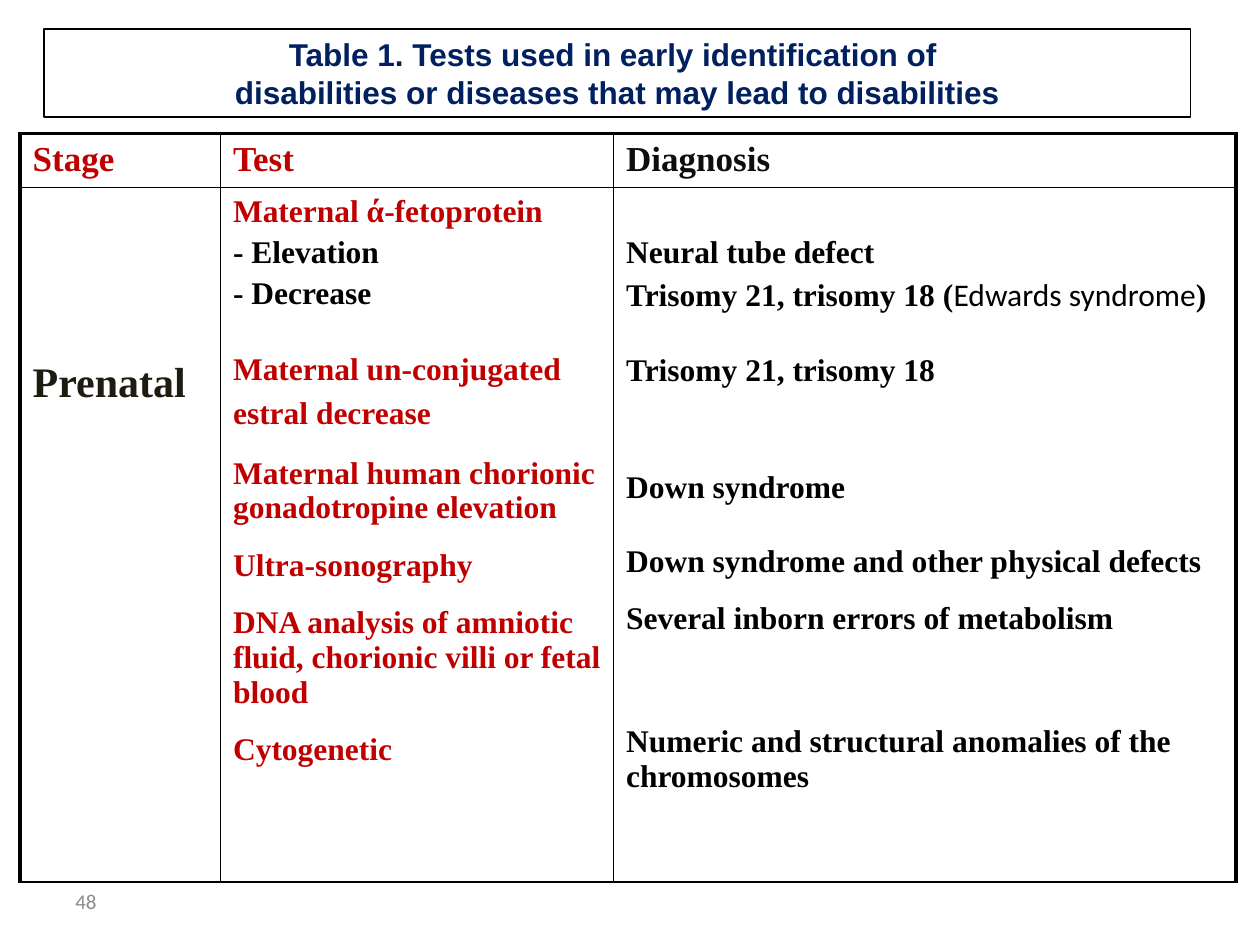
from lxml import etree
from pptx import Presentation
from pptx.dml.color import RGBColor
from pptx.enum.shapes import MSO_SHAPE
from pptx.enum.text import MSO_ANCHOR, PP_ALIGN
from pptx.oxml.ns import qn
from pptx.util import Inches, Pt

RECT = MSO_SHAPE.RECTANGLE
MIDDLE, TOP = MSO_ANCHOR.MIDDLE, MSO_ANCHOR.TOP
LEFT, CENTER = PP_ALIGN.LEFT, PP_ALIGN.CENTER

WIDE, HIGH = 10, 7.5
HEX = {"red": "C00000", "black": "000000", "near": "0D0D0D", "olive": "1E1C11",
       "navy": "002060", "gray": "8C8C8C", "white": "FFFFFF"}
SERIF = "Times New Roman"
COLS = [1.59, 3.12, 4.94]
ROWS = [0.43, 5.51]
THICK, THIN = 2.25, 1
LINE, STEP, WIDE_STEP = 3.6, 12.75, 22  # points of space before a paragraph

HEADS = [("Stage", "red"), ("Test", "red"), ("Diagnosis", "near")]
# Each entry: space before, then its runs as (text, color, changes)
STAGE = [(0, [("Prenatal", "olive", {"size": 24})])]
TESTS = [
    (0, [("Maternal ά-fetoprotein", "red", {})]),
    (LINE, [("- Elevation", "black", {})]),
    (LINE, [("- Decrease", "black", {})]),
    (23.5, [("Maternal un-conjugated estral decrease", "red", {}),
            (" ", "red", {"size": 24, "bold": False})]),
    (STEP, [("Maternal human chorionic gonadotropine elevation", "red", {})]),
    (STEP, [("Ultra-sonography", "red", {})]),
    (STEP, [("DNA analysis of amniotic fluid, chorionic villi or fetal blood",
             "red", {})]),
    (STEP, [("Cytogenetic", "red", {})]),
]
FINDS = [
    (0, [("Neural tube defect", "black", {})]),
    (LINE, [("Trisomy 21, trisomy 18 (", "black", {}),
            ("Edwards syndrome", "black", {"name": "Calibri", "bold": False}),
            (")", "black", {})]),
    (WIDE_STEP, [("Trisomy 21, trisomy 18", "black", {})]),
    (47, [("Down syndrome", "black", {})]),
    (WIDE_STEP, [("Down syndrome and other physical defects", "black", {})]),
    (STEP, [("Several inborn errors of metabolism", "black", {})]),
    (50.5, [("Numeric and structural anomalies of the chromosomes", "black", {})]),
]
BODY = [(STAGE, 1.37), (TESTS, 0.05), (FINDS, 0.38)]  # text, top margin


def rgb(name):
    return RGBColor.from_string(HEX[name])


def add_run(para, text, color, size=18, name=SERIF, bold=True):
    run = para.add_run()
    run.text = text
    for key, val in {"size": Pt(size), "name": name, "bold": bold}.items():
        setattr(run.font, key, val)
    run.font.color.rgb = rgb(color)


def write(frame, paras, align=LEFT, **base):
    """Fill a text frame with (space before, runs) entries."""
    for i, (gap, runs) in enumerate(paras):
        para = frame.add_paragraph() if i else frame.paragraphs[0]
        para.alignment = align
        para.space_before = Pt(gap)
        for text, color, diff in runs:
            add_run(para, text, color, **{**base, **diff})


def add_edges(cell, row, col):
    """Draw thick lines on the left, right and top of the table, thin elsewhere."""
    props = cell._tc.get_or_add_tcPr()
    thick = {"L": col == 0, "R": col == len(COLS) - 1, "T": row == 0, "B": False}
    for i, (side, bold) in enumerate(thick.items()):
        edge = etree.Element(qn(f"a:ln{side}"), w=str(Pt(THICK if bold else THIN)))
        fill = etree.SubElement(edge, qn("a:solidFill"))
        etree.SubElement(fill, qn("a:srgbClr"), val=HEX["black"])
        props.insert(i, edge)


def add_cell(table, row, col, paras, top, **base):
    cell = table.cell(row, col)
    cell.margin_top = Inches(top)
    cell.vertical_anchor = TOP
    write(cell.text_frame, paras, **base)
    add_edges(cell, row, col)
    cell.fill.background()


def add_grid(slide):
    frame = slide.shapes.add_table(len(ROWS), len(COLS), Inches(0.16), Inches(1.06),
                                   Inches(sum(COLS)), Inches(sum(ROWS)))
    table = frame.table
    table.first_row = table.horz_banding = False
    for col, width in zip(table.columns, COLS):
        col.width = Inches(width)
    for row, height in zip(table.rows, ROWS):
        row.height = Inches(height)
    for col, (text, color) in enumerate(HEADS):
        add_cell(table, 0, col, [(0, [(text, color, {})])], 0.05, size=20)
    for col, (paras, top) in enumerate(BODY):
        add_cell(table, 1, col, paras, top)


def add_title(slide):
    box = slide.shapes.add_shape(RECT, Inches(0.035 * WIDE), Inches(0.23),
                                 Inches(0.91 * WIDE), Inches(0.7))
    box.shadow.inherit = False
    box.fill.solid()
    box.fill.fore_color.rgb = rgb("white")
    box.line.color.rgb = rgb("black")
    box.line.width = Pt(0.75)
    frame = box.text_frame
    frame.word_wrap = False
    frame.vertical_anchor = MIDDLE
    lines = ["Table 1. Tests used in early identification of ",
             "disabilities or diseases that may lead to disabilities"]
    write(frame, [(0, [(line, "navy", {})]) for line in lines], CENTER, name="Arial")


def add_number(slide):
    box = slide.shapes.add_textbox(Inches(0.05 * WIDE), Inches(6.95),
                                   Inches(2.33), Inches(0.4))
    frame = box.text_frame
    frame.word_wrap = True
    frame.vertical_anchor = MIDDLE
    write(frame, [(0, [("48", "gray", {})])], size=12, name="Calibri", bold=False)


def main():
    deck = Presentation()
    deck.slide_width, deck.slide_height = Inches(WIDE), Inches(HIGH)
    slide = deck.slides.add_slide(deck.slide_layouts[6])
    add_grid(slide)
    add_title(slide)
    add_number(slide)
    deck.save("out.pptx")


if __name__ == "__main__":
    main()
